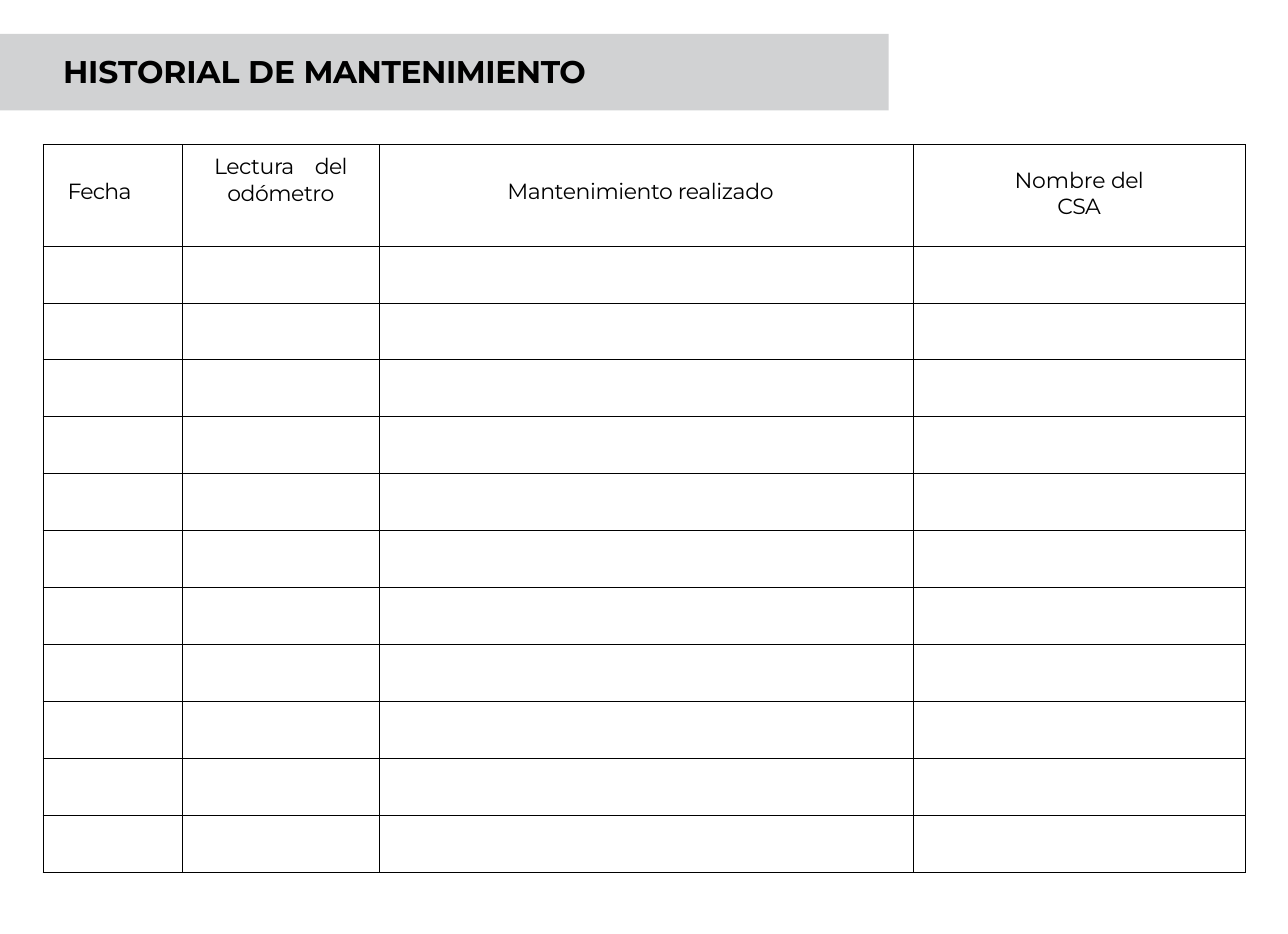
from lxml import etree
from pptx import Presentation
from pptx.dml.color import RGBColor
from pptx.enum.shapes import MSO_SHAPE
from pptx.enum.text import MSO_ANCHOR, PP_ALIGN
from pptx.oxml.ns import qn
from pptx.util import Inches, Pt

LEFT, CENTER = PP_ALIGN.LEFT, PP_ALIGN.CENTER
FONT, BLACK, GRAY = "Montserrat", "000000", "D1D2D3"

# Content: each line is a list of (text, letter spacing in points)
TITLE = [[("HISTORIAL DE ", 0), ("MANTENIMIENTO", -0.1)]]
# Column: width, left inset, top inset, alignment, lines
COLUMNS = [
    (0.62, 0.11, 0.15, LEFT, [[("Fecha", -0.2)]]),
    (0.87, 0.05, 0.04, CENTER,
     [[("Lectura", -0.1), (" ", 4.8), ("del", -0.2)], [("odómetro", -0.1)]]),
    (2.37, 0.57, 0.15, LEFT, [[("Mantenimiento realizado", -0.1)]]),
    (1.47, 0, 0.1, CENTER, [[("Nombre ", 0), ("del", -0.2)], [("CSA", -0.2)]]),
]
EMPTY_ROWS = 11
TABLE_LEFT, TABLE_TOP, TABLE_HEIGHT, HEADER_HEIGHT = 0.19, 0.64, 3.23, 0.45


def color(hex_value):
    return RGBColor.from_string(hex_value)


def write(tf, lines, size=7, bold=False, align=LEFT):
    for i, line in enumerate(lines):
        p = tf.paragraphs[0] if i == 0 else tf.add_paragraph()
        p.alignment = align
        for text, spacing in line:
            r = p.add_run()
            r.text = text
            r.font.name, r.font.size, r.font.bold = FONT, Pt(size), bold
            r.font.color.rgb = color(BLACK)
            r.font._element.set("spc", str(round(spacing * 100)))


def set_borders(cell, hex_value=BLACK, width=0.25):
    tcPr = cell._tc.get_or_add_tcPr()
    for i, side in enumerate(("lnL", "lnR", "lnT", "lnB")):
        ln = etree.Element(qn(f"a:{side}"), w=str(Pt(width)))
        fill = etree.SubElement(ln, qn("a:solidFill"))
        etree.SubElement(fill, qn("a:srgbClr"), val=hex_value)
        tcPr.insert(i, ln)


prs = Presentation()
prs.slide_width, prs.slide_height = Inches(5.71), Inches(4.14)
slide = prs.slides.add_slide(prs.slide_layouts[6])

# Title band
band = slide.shapes.add_shape(MSO_SHAPE.RECTANGLE, 0, Inches(0.15),
                              Inches(3.94), Inches(0.34))
band.shadow.inherit = False
band.fill.solid()
band.fill.fore_color.rgb = color(GRAY)
band.line.fill.background()

# Title
tf = slide.shapes.add_textbox(Inches(0.28), Inches(0.22),
                              Inches(2.5), Inches(0.19)).text_frame
tf.margin_left = tf.margin_top = tf.margin_right = tf.margin_bottom = 0
tf.vertical_anchor = MSO_ANCHOR.MIDDLE
tf.word_wrap = True
write(tf, TITLE, size=10, bold=True)

# Maintenance table
table = slide.shapes.add_table(
    EMPTY_ROWS + 1, len(COLUMNS), Inches(TABLE_LEFT), Inches(TABLE_TOP),
    Inches(sum(c[0] for c in COLUMNS)), Inches(TABLE_HEIGHT)).table
table.first_row = table.horz_banding = False
row_height = (TABLE_HEIGHT - HEADER_HEIGHT) / EMPTY_ROWS
for i, row in enumerate(table.rows):
    row.height = Inches(row_height if i else HEADER_HEIGHT)
for col, (width, *_) in zip(table.columns, COLUMNS):
    col.width = Inches(width)

for cell in table.iter_cells():
    cell.margin_left = cell.margin_right = 0
    cell.margin_top = cell.margin_bottom = 0
    cell.fill.background()
    set_borders(cell)

# Column headings
for i, (_, left, top, align, lines) in enumerate(COLUMNS):
    cell = table.cell(0, i)
    cell.margin_left, cell.margin_top = Inches(left), Inches(top)
    if align == CENTER:
        cell.margin_right = Inches(left)
    write(cell.text_frame, lines, align=align)

# Small type in the blank cells keeps the rows at their height
for cell in table.iter_cells():
    if not cell.text:
        p = cell.text_frame.paragraphs[0]
        etree.SubElement(p._p, qn("a:endParaRPr"), sz="700")

prs.save("out.pptx")
